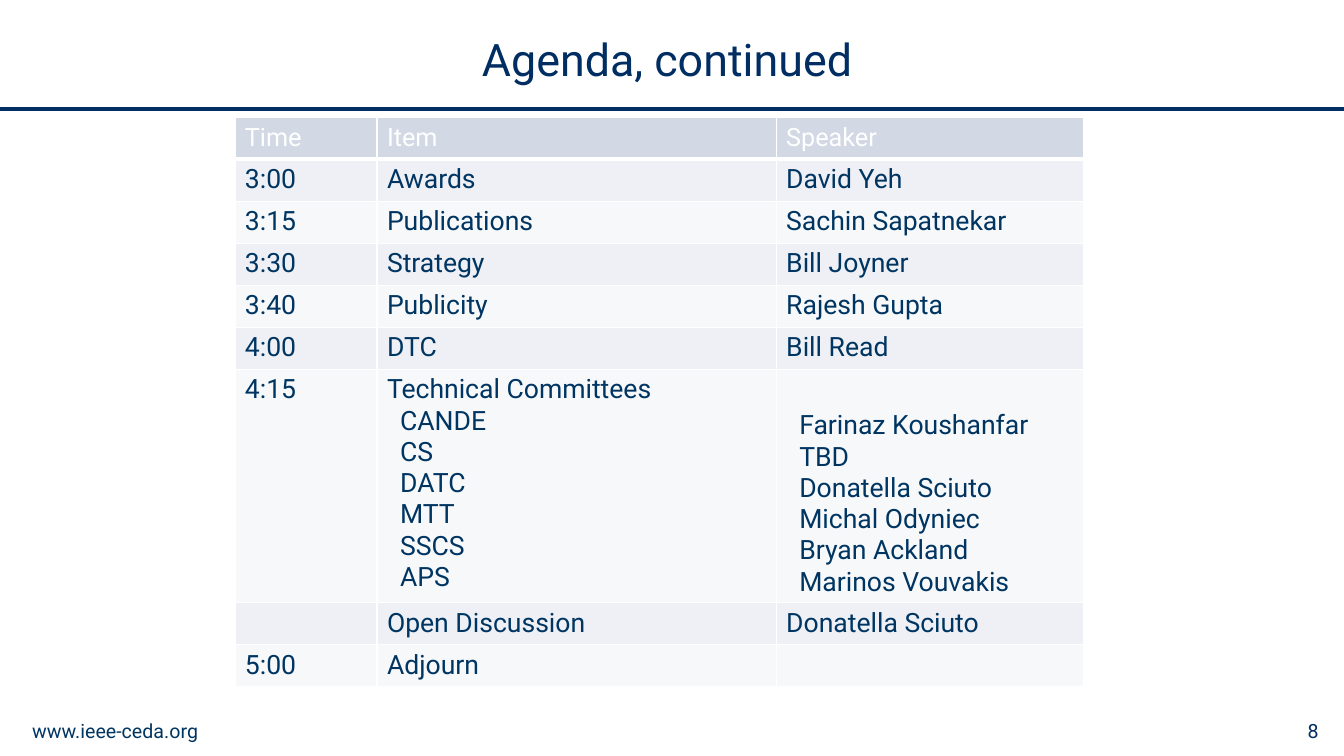
from dataclasses import dataclass

from lxml import etree
from pptx import Presentation
from pptx.dml.color import RGBColor
from pptx.enum.shapes import MSO_CONNECTOR
from pptx.enum.text import MSO_ANCHOR, PP_ALIGN
from pptx.oxml.ns import qn
from pptx.util import Cm, Pt

STRAIGHT = MSO_CONNECTOR.STRAIGHT
LEFT, CENTER, RIGHT = PP_ALIGN.LEFT, PP_ALIGN.CENTER, PP_ALIGN.RIGHT
TOP, MIDDLE, BOTTOM = MSO_ANCHOR.TOP, MSO_ANCHOR.MIDDLE, MSO_ANCHOR.BOTTOM


@dataclass(frozen=True)
class Theme:
    """Fonts, colours and type sizes of the slide."""
    font: str = "Roboto"
    navy: str = "002D62"
    ink: str = "003562"
    white: str = "FFFFFF"
    header_fill: str = "D2D8E4"
    band_fills: tuple = ("EEF0F5", "F7F8FA")
    title_size: int = 32
    header_size: int = 18
    body_size: int = 19
    footer_size: int = 14


THEME = Theme()
SLIDE_WIDTH, SLIDE_HEIGHT = Cm(33.87), Cm(19.05)
COLUMN_WIDTHS = (Cm(3.58), Cm(10.06), Cm(7.75))
ROW_HEIGHT = Cm(1.04)
COMMITTEE_ROW_HEIGHT = Cm(5.77)
COMMITTEE_INDENT = Cm(0.33)

COMMITTEES = (
    ("CANDE", "Farinaz Koushanfar"),
    ("CS", "TBD"),
    ("DATC", "Donatella Sciuto"),
    ("MTT", "Michal Odyniec"),
    ("SSCS", "Bryan Ackland"),
    ("APS", "Marinos Vouvakis"),
)
HEADER = ("Time", "Item", "Speaker")
COMMITTEE_ITEM = "Technical Committees"
AGENDA = (
    ("3:00", "Awards", "David Yeh"),
    ("3:15", "Publications", "Sachin Sapatnekar"),
    ("3:30", "Strategy", "Bill Joyner"),
    ("3:40", "Publicity", "Rajesh Gupta"),
    ("4:00", "DTC", "Bill Read"),
    ("4:15", COMMITTEE_ITEM, ""),
    ("", "Open Discussion", "Donatella Sciuto"),
    ("5:00", "Adjourn", ""),
)


def apply(target, values):
    """Set each attribute named in values on the target."""
    for name, value in values.items():
        setattr(target, name, value)


def format_paragraph(paragraph, size, color, alignment=LEFT):
    """Give a paragraph its alignment, font, size and colour."""
    paragraph.alignment = alignment
    apply(paragraph.font, {"name": THEME.font, "size": Pt(size), "bold": False})
    paragraph.font.color.rgb = RGBColor.from_string(color)


def set_title(slide, text):
    """Fill and place the title placeholder."""
    title = slide.shapes.title
    apply(title, {"left": Cm(2.26), "top": Cm(0.2),
                  "width": Cm(29.11), "height": Cm(2.54)})
    apply(title.text_frame, {"text": text, "vertical_anchor": MIDDLE, "word_wrap": True})
    format_paragraph(title.text_frame.paragraphs[0], THEME.title_size, THEME.navy, CENTER)


def add_rule(slide, top):
    """Draw the line across the slide below the title."""
    rule = slide.shapes.add_connector(STRAIGHT, 0, top, SLIDE_WIDTH, top)
    rule.line.color.rgb = RGBColor.from_string(THEME.navy)
    rule.line.width = Pt(3)
    etree.SubElement(rule._element.spPr, qn("a:effectLst"))


def add_footer(slide, text, left, width, color, alignment):
    """Add one text box on the footer line."""
    box = slide.shapes.add_textbox(left, Cm(17.98), width, Cm(0.88))
    apply(box.text_frame, {"text": text, "vertical_anchor": MIDDLE, "word_wrap": True})
    format_paragraph(box.text_frame.paragraphs[0], THEME.footer_size, color, alignment)


def set_borders(cell, bottom_width):
    """Give a cell white borders, with its own bottom width."""
    properties = cell._tc.get_or_add_tcPr()
    for side, width in (("L", 1), ("R", 1), ("T", 1), ("B", bottom_width)):
        line = etree.SubElement(properties, qn(f"a:ln{side}"), w=str(Pt(width)))
        fill = etree.SubElement(line, qn("a:solidFill"))
        etree.SubElement(fill, qn("a:srgbClr"), val=THEME.white)


def fill_cell(cell, lines, size, color, fill, bottom_width=1, anchor=TOP, indents=None):
    """Write the lines of a cell and set its look."""
    set_borders(cell, bottom_width)
    cell.fill.solid()
    cell.fill.fore_color.rgb = RGBColor.from_string(fill)
    cell.vertical_anchor = anchor
    cell.text = "\n".join(lines)
    for index, paragraph in enumerate(cell.text_frame.paragraphs):
        if indents:
            paragraph._p.get_or_add_pPr().set("marL", str(indents[index]))
        format_paragraph(paragraph, size, color)


def add_agenda(slide):
    """Add the agenda table with its nested committee row."""
    height = ROW_HEIGHT * len(AGENDA) + COMMITTEE_ROW_HEIGHT
    frame = slide.shapes.add_table(len(AGENDA) + 1, len(HEADER), Cm(5.92), Cm(2.97),
                                   sum(COLUMN_WIDTHS), height)
    table = frame.table
    for column, width in zip(table.columns, COLUMN_WIDTHS):
        column.width = width
    for row in table.rows:
        row.height = ROW_HEIGHT
    for column, text in enumerate(HEADER):
        fill_cell(table.cell(0, column), [text], THEME.header_size, THEME.white,
                  THEME.header_fill, bottom_width=3)

    names, speakers = zip(*COMMITTEES)
    indents = [COMMITTEE_INDENT] * len(COMMITTEES)
    for row, entry in enumerate(AGENDA, start=1):
        fill = THEME.band_fills[(row - 1) % 2]
        nested = {}
        if entry[1] == COMMITTEE_ITEM:
            table.rows[row].height = COMMITTEE_ROW_HEIGHT
            nested = {1: ([COMMITTEE_ITEM, *names], TOP, [0, *indents]),
                      2: (speakers, BOTTOM, indents)}
        for column, text in enumerate(entry):
            lines, anchor, margins = nested.get(column, ([text], TOP, None))
            fill_cell(table.cell(row, column), lines, THEME.body_size, THEME.ink,
                      fill, anchor=anchor, indents=margins)


def main():
    """Build and save the agenda slide."""
    presentation = Presentation()
    apply(presentation, {"slide_width": SLIDE_WIDTH, "slide_height": SLIDE_HEIGHT})
    slide = presentation.slides.add_slide(presentation.slide_layouts[5])
    add_rule(slide, Cm(2.75))
    set_title(slide, "Agenda, continued")
    add_footer(slide, "8", Cm(30.2), Cm(3.28), THEME.navy, RIGHT)
    add_footer(slide, "www.ieee-ceda.org", Cm(0.56), Cm(7.9), THEME.ink, LEFT)
    add_agenda(slide)
    presentation.save("out.pptx")


if __name__ == "__main__":
    main()
